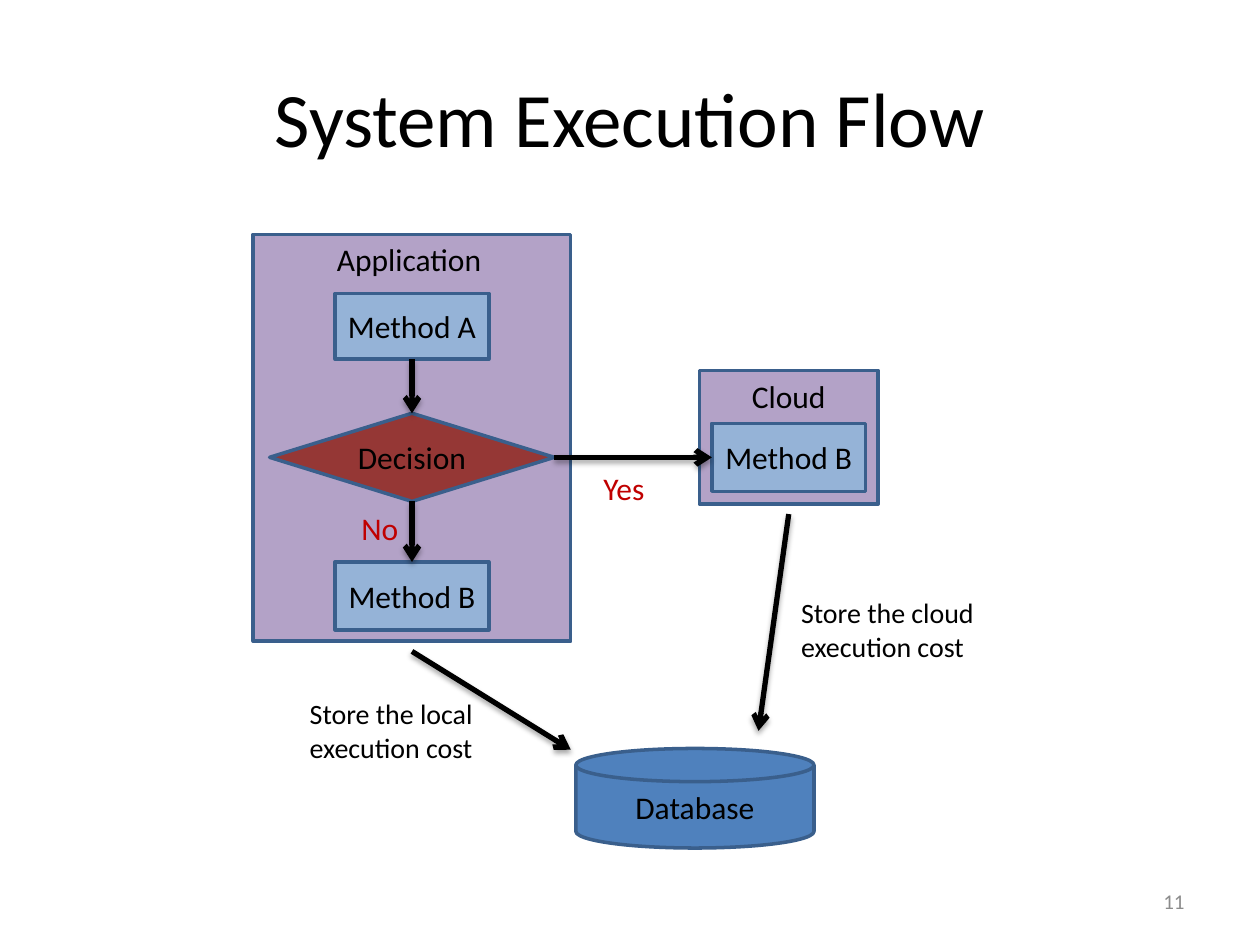
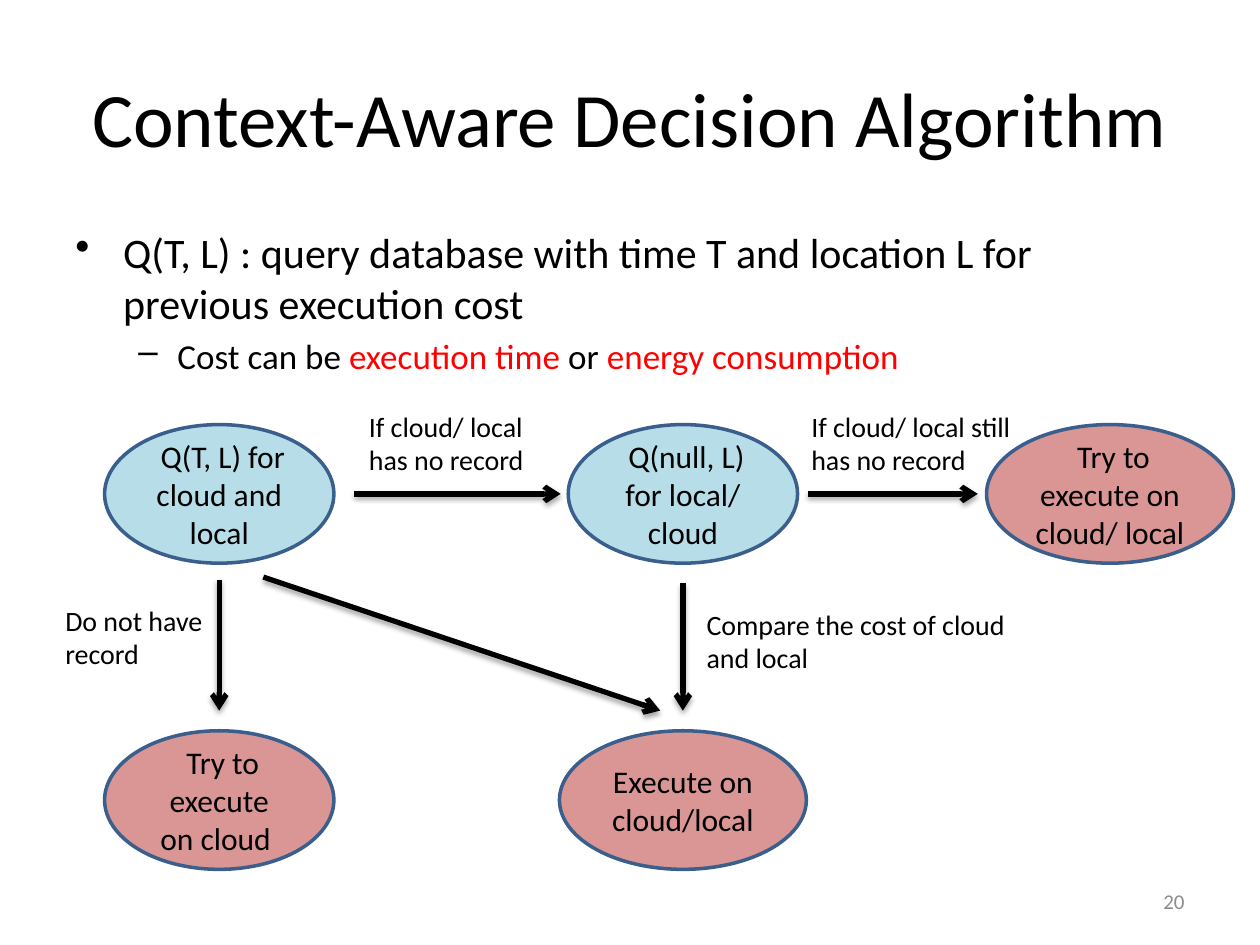
from dataclasses import dataclass
from typing import NamedTuple

from lxml.etree import SubElement
from pptx import Presentation
from pptx.dml.color import RGBColor
from pptx.enum.shapes import MSO_CONNECTOR, MSO_SHAPE
from pptx.enum.text import MSO_ANCHOR, PP_ALIGN
from pptx.oxml.ns import qn
from pptx.presentation import Presentation as Deck
from pptx.shapes.autoshape import Shape
from pptx.shapes.connector import Connector
from pptx.slide import Slide
from pptx.text.text import TextFrame, _Paragraph as Paragraph
from pptx.util import Emu, Pt

PX = 9144
FONT = "Calibri"
BLACK = RGBColor(0x00, 0x00, 0x00)
GRAY = RGBColor(0x8C, 0x8C, 0x8C)
RED = RGBColor(0xFF, 0x00, 0x00)
DARK_RED = RGBColor(0xC0, 0x00, 0x00)
OUTLINE = RGBColor(0x3A, 0x5F, 0x8C)
PURPLE = RGBColor(0xB3, 0xA2, 0xC7)
LIGHT_BLUE = RGBColor(0x95, 0xB3, 0xD7)
BLUE = RGBColor(0x4F, 0x81, 0xBD)
BRICK = RGBColor(0x95, 0x37, 0x35)
AQUA = RGBColor(0xB7, 0xDE, 0xE8)
ROSE = RGBColor(0xD9, 0x96, 0x94)
TOP, LEFT, BOTTOM, RIGHT = range(4)
BOX_WIDTH, BOX_HEIGHT = 122, 54
OVAL_HEIGHT = 110


class Box(NamedTuple):
    left: int
    top: int
    width: int
    height: int


@dataclass(frozen=True)
class Node:
    box: Box
    fill: RGBColor
    text: str = ""
    kind: MSO_SHAPE = MSO_SHAPE.RECTANGLE


@dataclass(frozen=True)
class Label:
    text: str
    box: Box
    size: int = 16
    color: RGBColor = BLACK
    align: PP_ALIGN = PP_ALIGN.LEFT
    anchor: MSO_ANCHOR = MSO_ANCHOR.TOP


class Arrow(NamedTuple):
    x1: int
    y1: int
    x2: int
    y2: int


class Link(NamedTuple):
    source: Shape
    source_side: int
    target: Shape
    target_side: int


def px(*lengths: int) -> list[Emu]:
    return [Emu(length * PX) for length in lengths]


def style_paragraph(paragraph: Paragraph, size: int, color: RGBColor = BLACK,
                    align: PP_ALIGN = PP_ALIGN.LEFT) -> None:
    paragraph.alignment = align
    paragraph.font.name = FONT
    paragraph.font.size = Pt(size)
    paragraph.font.color.rgb = color


def draw_node(slide: Slide, node: Node) -> Shape:
    shape = slide.shapes.add_shape(node.kind, *px(*node.box))
    shape.shadow.inherit = False
    shape.fill.solid()
    shape.fill.fore_color.rgb = node.fill
    shape.line.color.rgb = OUTLINE
    shape.line.width = Pt(2)
    if node.text:
        frame = shape.text_frame
        frame.text = node.text
        frame.vertical_anchor = MSO_ANCHOR.MIDDLE
        style_paragraph(frame.paragraphs[0], 18, align=PP_ALIGN.CENTER)
    return shape


def add_frame(slide: Slide, box: Box) -> TextFrame:
    frame = slide.shapes.add_textbox(*px(*box)).text_frame
    frame.word_wrap = True
    return frame


def draw_label(slide: Slide, label: Label) -> None:
    frame = add_frame(slide, label.box)
    frame.vertical_anchor = label.anchor
    frame.text = label.text
    style_paragraph(frame.paragraphs[0], label.size, label.color, label.align)


def style_arrow(connector: Connector) -> None:
    connector.line.color.rgb = BLACK
    connector.line.width = Pt(3)
    properties = connector._element.spPr
    SubElement(properties.find(qn("a:ln")), qn("a:tailEnd"), type="arrow")
    effects = SubElement(properties, qn("a:effectLst"))
    shadow = SubElement(effects, qn("a:outerShdw"), blurRad=str(Pt(3.1)),
                        dist=str(Pt(1.8)), dir="5400000", rotWithShape="0")
    tint = SubElement(shadow, qn("a:srgbClr"), val=str(BLACK))
    SubElement(tint, qn("a:alpha"), val="35000")


def draw_arrow(slide: Slide, arrow: Arrow) -> None:
    style_arrow(slide.shapes.add_connector(MSO_CONNECTOR.STRAIGHT, *px(*arrow)))


def draw_link(slide: Slide, link: Link) -> None:
    connector = slide.shapes.add_connector(MSO_CONNECTOR.STRAIGHT, 0, 0, 0, 0)
    connector.begin_connect(link.source, link.source_side)
    connector.end_connect(link.target, link.target_side)
    style_arrow(connector)


def start_slide(deck: Deck, title: str, number: int) -> Slide:
    slide = deck.slides.add_slide(deck.slide_layouts[6])
    draw_label(slide, Label(title, Box(50, 30, 900, 125), 44,
                            align=PP_ALIGN.CENTER, anchor=MSO_ANCHOR.MIDDLE))
    draw_label(slide, Label(str(number), Box(717, 695, 233, 40), 12, GRAY,
                            PP_ALIGN.RIGHT, MSO_ANCHOR.MIDDLE))
    return slide


def add_bullet(paragraph: Paragraph, runs: list[tuple[str, RGBColor]], size: int,
               mark: str, margin: int, hanging: int) -> None:
    style_paragraph(paragraph, size)
    paragraph.space_before = Pt(size * 0.2)
    for text, color in runs:
        run = paragraph.add_run()
        run.text = text
        run.font.color.rgb = color
    properties = paragraph._p.get_or_add_pPr()
    properties.set("marL", str(margin * PX))
    properties.set("indent", str(-hanging * PX))
    bullet = properties.makeelement(qn("a:buChar"), {"char": mark})
    properties.find(qn("a:defRPr")).addprevious(bullet)


def build_execution_flow(deck: Deck) -> None:
    slide = start_slide(deck, "System Execution Flow", 11)
    for panel in (Node(Box(201, 186, 252, 323), PURPLE),
                  Node(Box(555, 294, 142, 106), PURPLE)):
        draw_node(slide, panel)

    method_a, local_method_b, cloud_method_b = (
        draw_node(slide, Node(Box(left, top, BOX_WIDTH, height), LIGHT_BLUE, text))
        for text, left, top, height in (("Method A", 266, 233, 52),
                                        ("Method B", 266, 446, BOX_HEIGHT),
                                        ("Method B", 565, 336, BOX_HEIGHT)))
    decision = draw_node(slide, Node(Box(214, 328, 226, 70), BRICK, "Decision",
                                     MSO_SHAPE.FLOWCHART_DECISION))
    draw_node(slide, Node(Box(457, 594, 189, 79), BLUE, "Database",
                          MSO_SHAPE.FLOWCHART_MAGNETIC_DISK))

    for link in (Link(method_a, BOTTOM, decision, TOP),
                 Link(decision, BOTTOM, local_method_b, TOP),
                 Link(decision, RIGHT, cloud_method_b, LEFT)):
        draw_link(slide, link)
    for arrow in (Arrow(327, 517, 453, 595), Arrow(626, 408, 602, 580)):
        draw_arrow(slide, arrow)

    for label in (
        Label("Application ", Box(237, 186, 181, 40), 18, align=PP_ALIGN.CENTER),
        Label("Cloud", Box(559, 294, 134, 40), 18, align=PP_ALIGN.CENTER),
        Label("No ", Box(276, 399, 51, 40), 18, DARK_RED, PP_ALIGN.CENTER),
        Label("Yes", Box(469, 367, 55, 40), 18, DARK_RED),
        Label("Store the local execution cost", Box(236, 548, 152, 64)),
        Label("Store the cloud execution cost", Box(626, 468, 182, 64)),
    ):
        draw_label(slide, label)


def build_decision_algorithm(deck: Deck) -> None:
    slide = start_slide(deck, "Context-Aware Decision Algorithm", 20)
    body = add_frame(slide, Box(50, 175, 900, 495))
    add_bullet(body.paragraphs[0],
               [("Q(T, L) : query database with time T and location L for "
                 "previous execution cost", BLACK)], 24, "•", 38, 38)
    cost = body.add_paragraph()
    cost.level = 1
    add_bullet(cost, [("Cost can be ", BLACK), ("execution time", RED),
                      (" or ", BLACK), ("energy consumption", RED)],
               20, "–", 81, 31)

    first, second, third = 174, 542, 881
    query_row, result_row = 337, 580
    narrow, wide = 182, 196
    for text, center, top, width, fill in (
        (" Q(T, L) for cloud and local", first, query_row, narrow, AQUA),
        (" Q(null, L) for local/ cloud", second, query_row, narrow, AQUA),
        (" Try to execute on cloud/ local", third, query_row, wide, ROSE),
        (" Try to execute on cloud ", first, result_row, narrow, ROSE),
        ("Execute on cloud/local", second, result_row, wide, ROSE),
    ):
        box = Box(center - width // 2, top, width, OVAL_HEIGHT)
        draw_node(slide, Node(box, fill, text, MSO_SHAPE.OVAL))

    across = query_row + OVAL_HEIGHT // 2
    arrow_end = result_row - 16
    for arrow in (Arrow(281, across, 445, across), Arrow(641, across, 776, across),
                  Arrow(first, 460, first, arrow_end),
                  Arrow(209, 458, 524, arrow_end),
                  Arrow(second, 463, second, arrow_end)):
        draw_arrow(slide, arrow)

    for text, left, top, width in (
        ("If cloud/ local has no record", 283, 320, 146),
        ("If cloud/ local still has no record", 634, 320, 181),
        ("Do not have record", 42, 474, 136),
        ("Compare the cost of cloud and local", 551, 477, 287),
    ):
        draw_label(slide, Label(text, Box(left, top, width, 64)))


def main() -> None:
    deck = Presentation()
    deck.slide_width, deck.slide_height = px(1000, 750)
    build_execution_flow(deck)
    build_decision_algorithm(deck)
    deck.save("out.pptx")


if __name__ == "__main__":
    main()
